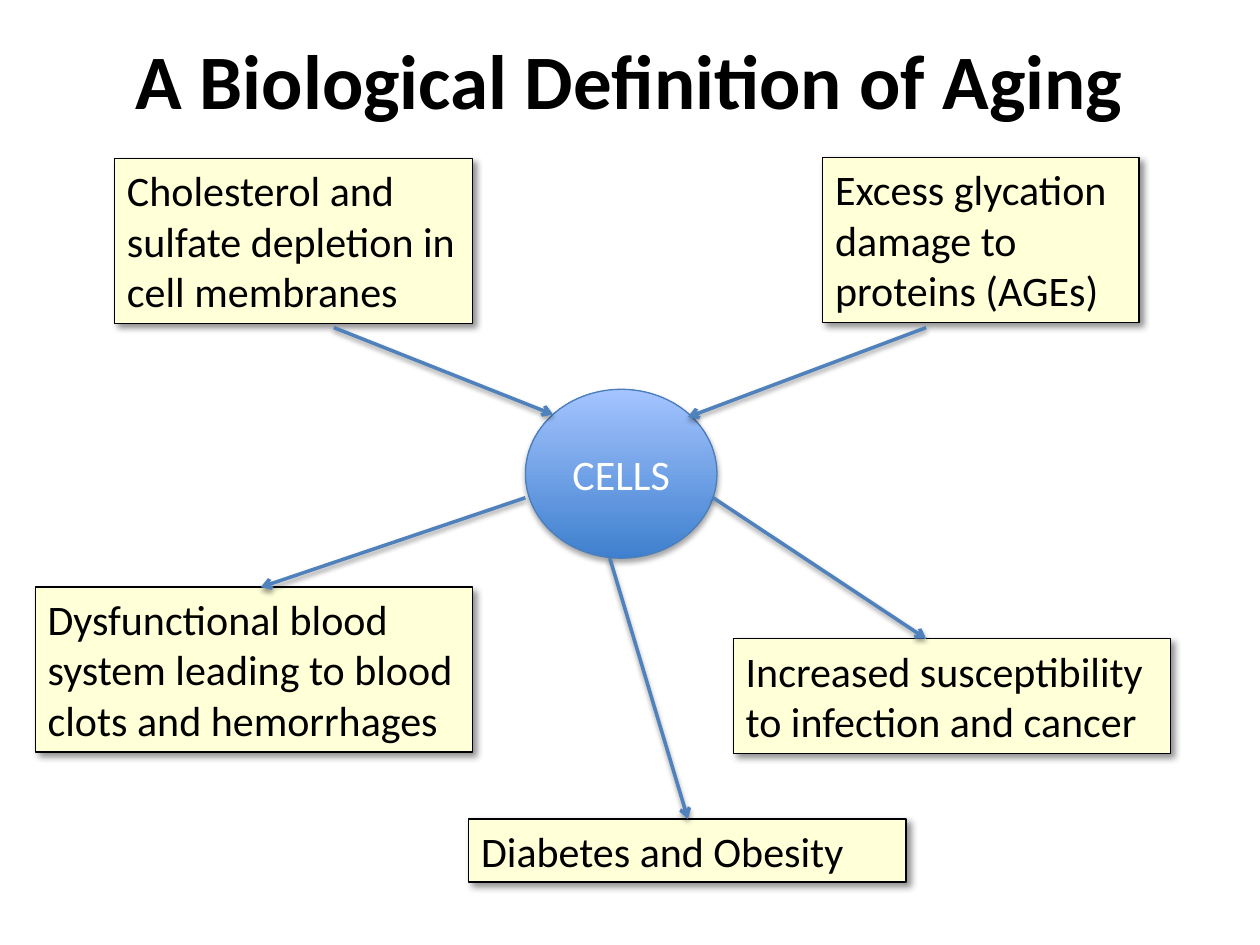
from typing import NamedTuple

from lxml.etree import SubElement
from pptx import Presentation
from pptx.dml.color import RGBColor
from pptx.enum.shapes import MSO_CONNECTOR, MSO_SHAPE
from pptx.enum.text import MSO_ANCHOR, MSO_AUTO_SIZE, PP_ALIGN
from pptx.oxml.ns import qn
from pptx.util import Inches, Pt

BLACK = RGBColor(0x00, 0x00, 0x00)
WHITE = RGBColor(0xFF, 0xFF, 0xFF)
CREAM = RGBColor(0xFF, 0xFF, 0xD8)
DEEP = RGBColor(0x3F, 0x80, 0xCE)
PALE = RGBColor(0xA4, 0xC4, 0xFF)
RIM = RGBColor(0x4B, 0x7E, 0xBC)
BLUE = RGBColor(0x4F, 0x81, 0xBD)

COLS, ROWS = 100, 75
CELL = Inches(10) // COLS


class Area(NamedTuple):
    col: float
    row: float
    wide: float
    high: float


class Note(NamedTuple):
    area: Area
    text: str


class Arrow(NamedTuple):
    col: float
    row: float
    to_col: float
    to_row: float


class Shade(NamedTuple):
    alpha: int
    blur: float
    dist: float
    angle: int


NOTE_SHADE = Shade(43, 4, 3, 45)
CELL_SHADE = Shade(35, 3.1, 1.8, 90)
LINE_SHADE = Shade(38, 3.1, 1.6, 90)

TITLE = Area(5, 0, 90, 12.5)
HUB = Area(41.7, 30.9, 15.2, 13.4)
NOTES = [
    Note(Area(65.3, 12.5, 25.1, 13.1), "Excess glycation damage to proteins (AGEs)"),
    Note(Area(9.1, 12.6, 28.4, 13.1), "Cholesterol and sulfate depletion in cell membranes"),
    Note(Area(58.2, 50.7, 34.7, 9.1), "Increased susceptibility to infection and cancer"),
    Note(Area(2.8, 46.6, 34.7, 13.1),
         "Dysfunctional blood system leading to blood clots and hemorrhages"),
    Note(Area(37.2, 65, 34.7, 5), "Diabetes and Obesity"),
]
ARROWS = [
    Arrow(26.5, 26, 43.9, 32.9),
    Arrow(73.5, 26, 54.6, 33.1),
    Arrow(41.7, 39.5, 20.7, 46.6),
    Arrow(56.6, 39.5, 73.5, 50.7),
    Arrow(48.4, 44.3, 54.6, 65),
]


def grid(spot: tuple) -> list[int]:
    return [round(part * CELL) for part in spot]


def write(shape, text: str, *, size: int = 24, color: RGBColor = BLACK,
          bold: bool = False, align=PP_ALIGN.LEFT, anchor=MSO_ANCHOR.TOP,
          fit=MSO_AUTO_SIZE.NONE) -> None:
    frame = shape.text_frame
    frame.word_wrap = True
    frame.auto_size = fit
    frame.vertical_anchor = anchor
    para = frame.paragraphs[0]
    para.alignment = align
    run = para.add_run()
    run.text = text
    font = run.font
    font.name, font.size, font.bold = "Calibri", Pt(size), bold
    font.color.rgb = color


def cast(shape, shade: Shade) -> None:
    effect = SubElement(shape.element.spPr, qn("a:effectLst"))
    outer = SubElement(effect, qn("a:outerShdw"), blurRad=str(Pt(shade.blur)),
                       dist=str(Pt(shade.dist)), dir=str(shade.angle * 60000),
                       algn="tl", rotWithShape="0")
    color = SubElement(outer, qn("a:srgbClr"), val=str(BLACK))
    SubElement(color, qn("a:alpha"), val=str(shade.alpha * 1000))


def stroke(line, color: RGBColor, width: float) -> None:
    line.color.rgb = color
    line.width = Pt(width)


def draw_note(slide, note: Note) -> None:
    box = slide.shapes.add_shape(MSO_SHAPE.RECTANGLE, *grid(note.area))
    box.fill.solid()
    box.fill.fore_color.rgb = CREAM
    stroke(box.line, BLACK, 0.75)
    cast(box, NOTE_SHADE)
    write(box, note.text, fit=MSO_AUTO_SIZE.SHAPE_TO_FIT_TEXT)


def draw_hub(slide, area: Area) -> None:
    hub = slide.shapes.add_shape(MSO_SHAPE.OVAL, *grid(area))
    hub.fill.gradient()
    hub.fill.gradient_angle = 90
    for stop, color, place in zip(hub.fill.gradient_stops, (DEEP, PALE), (0, 1)):
        stop.color.rgb = color
        stop.position = place
    stroke(hub.line, RIM, 0.75)
    cast(hub, CELL_SHADE)
    write(hub, "CELLS", color=WHITE, align=PP_ALIGN.CENTER, anchor=MSO_ANCHOR.MIDDLE)


def draw_arrow(slide, arrow: Arrow) -> None:
    link = slide.shapes.add_connector(MSO_CONNECTOR.STRAIGHT, *grid(arrow))
    stroke(link.line, BLUE, 2)
    SubElement(link.element.spPr.find(qn("a:ln")), qn("a:tailEnd"), type="arrow")
    cast(link, LINE_SHADE)


def main() -> None:
    deck = Presentation()
    deck.slide_width, deck.slide_height = COLS * CELL, ROWS * CELL
    slide = deck.slides.add_slide(deck.slide_layouts[6])
    title = slide.shapes.add_textbox(*grid(TITLE))
    write(title, "A Biological Definition of Aging", size=44, bold=True,
          align=PP_ALIGN.CENTER, anchor=MSO_ANCHOR.MIDDLE)
    for note in NOTES:
        draw_note(slide, note)
    draw_hub(slide, HUB)
    for arrow in ARROWS:
        draw_arrow(slide, arrow)
    deck.save("out.pptx")


if __name__ == "__main__":
    main()
